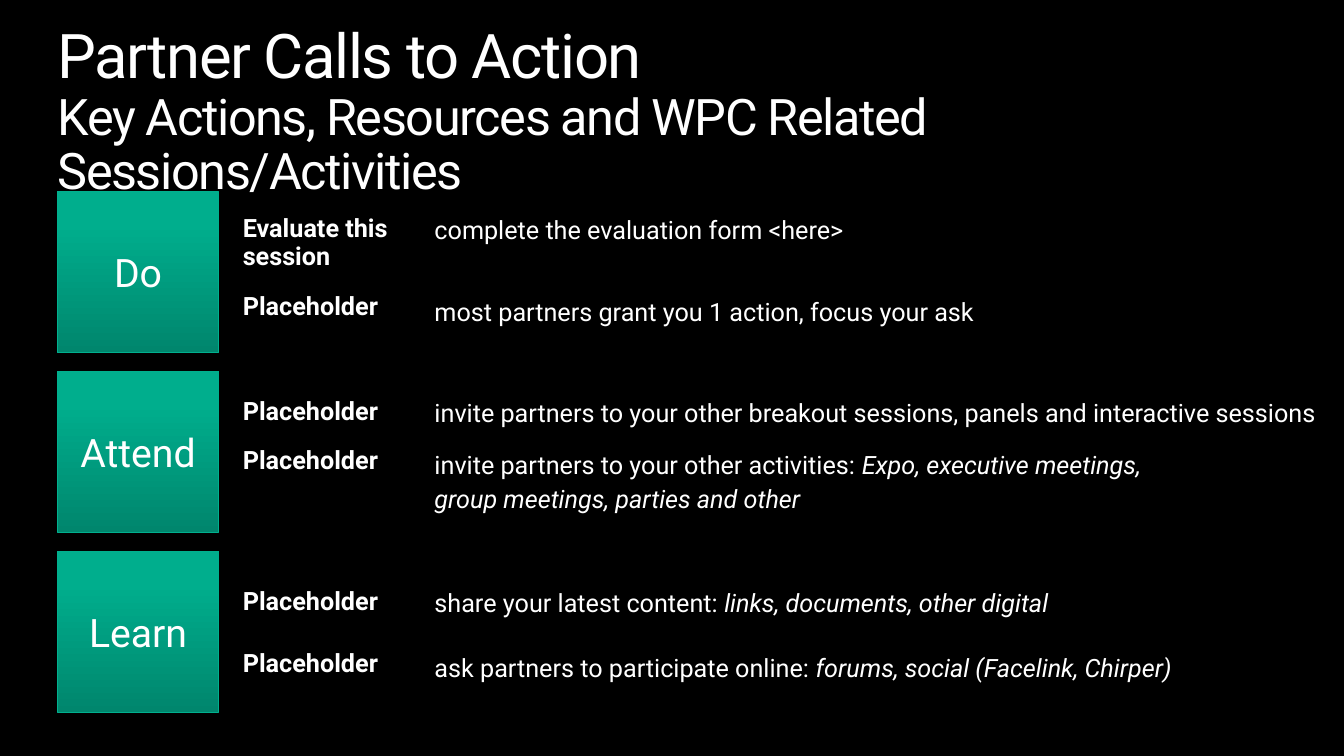
from copy import deepcopy
from dataclasses import dataclass

from lxml import etree
from pptx import Presentation
from pptx.dml.color import RGBColor
from pptx.enum.shapes import MSO_SHAPE
from pptx.enum.text import MSO_ANCHOR, MSO_AUTO_SIZE, PP_ALIGN
from pptx.oxml.ns import qn
from pptx.util import Cm, Pt

RECTANGLE = MSO_SHAPE.RECTANGLE
MIDDLE = MSO_ANCHOR.MIDDLE
GROW = MSO_AUTO_SIZE.SHAPE_TO_FIT_TEXT
CENTER = PP_ALIGN.CENTER


@dataclass(frozen=True)
class Theme:
    font: str = "Roboto"
    black: RGBColor = RGBColor(0, 0, 0)
    white: RGBColor = RGBColor(255, 255, 255)
    edge: RGBColor = RGBColor(0x00, 0xB0, 0x8E)
    gradient: tuple = ((0, "00866D"), (0.8, "00AE8D"), (1, "00AF8E"))
    title: Pt = Pt(44)
    subtitle: Pt = Pt(36)
    category: Pt = Pt(28)
    body: Pt = Pt(18)


theme = Theme()


def add_run(paragraph, text, size, bold=None, italic=None):
    run = paragraph.add_run()
    run.text = text
    run.font.name = theme.font
    run.font.size = size
    run.font.color.rgb = theme.white
    run.font.bold = bold
    run.font.italic = italic
    return run


def add_text_box(left, top, width, height):
    frame = slide.shapes.add_textbox(Cm(left), Cm(top), Cm(width), Cm(height)).text_frame
    frame.word_wrap = True
    frame.auto_size = GROW
    frame.margin_left = frame.margin_right = frame.margin_top = frame.margin_bottom = 0
    return frame.paragraphs[0]


SLIDE_WIDTH = 33.87
MARGIN = 1.45
ROW_PITCH = 4.53

prs = Presentation()
prs.slide_width = Cm(SLIDE_WIDTH)
prs.slide_height = Cm(19.05)
slide = prs.slides.add_slide(prs.slide_layouts[6])
slide.background.fill.solid()
slide.background.fill.fore_color.rgb = theme.black

heading = add_text_box(MARGIN, 0.64, 30.96, 3.07)
heading.line_spacing = 0.9
title = add_run(heading, "Partner Calls to Action", theme.title)
heading.add_line_break()
subtitle = add_run(
    heading, "Key Actions, Resources and WPC Related Sessions/Activities", theme.subtitle
)
for heading_run in (title, subtitle):
    heading_run.font._element.set("spc", "-100")

categories = ("Do", "Attend", "Learn")

for index in range(len(categories)):
    band = slide.shapes.add_shape(
        RECTANGLE, 0, Cm(4.96 + index * ROW_PITCH), Cm(SLIDE_WIDTH), Cm(3.81)
    )
    band.shadow.inherit = False
    band.line.fill.background()
    band.fill.solid()
    band.fill.fore_color.rgb = theme.black
    band_color = band._element.spPr.find(".//" + qn("a:srgbClr"))
    etree.SubElement(band_color, qn("a:alpha"), val="55000")

for index, category in enumerate(categories):
    tile = slide.shapes.add_shape(
        RECTANGLE, Cm(MARGIN), Cm(4.83 + index * ROW_PITCH), Cm(4.06), Cm(4.06)
    )
    tile.shadow.inherit = False
    tile.line.color.rgb = theme.edge
    tile.line.width = Pt(0.75)
    tile.fill.gradient()
    tile.fill.gradient_angle = 90
    stop_list = tile._element.spPr.find(".//" + qn("a:gsLst"))
    stop_list.append(deepcopy(stop_list[-1]))
    for stop, (position, color) in zip(tile.fill.gradient_stops, theme.gradient):
        stop.position = position
        stop.color.rgb = RGBColor.from_string(color)
    caption = tile.text_frame
    caption.margin_left = caption.margin_right = caption.margin_top = caption.margin_bottom = 0
    caption.vertical_anchor = MIDDLE
    caption.paragraphs[0].alignment = CENTER
    add_run(caption.paragraphs[0], category, theme.category)

NARROW, WIDE = 21.44, 22.91
actions = (
    (5.41, NARROW, None, ("Evaluate this ", "session"),
     "complete the evaluation form <here>", ()),
    (7.37, NARROW, Pt(24), ("Placeholder",),
     "most partners grant you 1 action, focus your ask", ()),
    (10.01, WIDE, None, ("Placeholder",),
     "invite partners to your other breakout sessions, panels and interactive sessions", ()),
    (11.25, NARROW, Pt(24), ("Placeholder",),
     "invite partners to your other activities: ",
     ("Expo, executive meetings, ", "group meetings, parties and other")),
    (14.81, WIDE, None, ("Placeholder",),
     "share your latest content: ", ("links, documents, other digital",)),
    (16.36, NARROW, Pt(24), ("Placeholder",),
     "ask partners to participate online: ", ("forums, social (Facelink, Chirper)",)),
)

for top, width, spacing, label_lines, lead, example_lines in actions:
    detail = add_text_box(10.95, top, width, 0.76 + 0.85 * (len(example_lines) > 1))
    if spacing:
        detail.line_spacing = spacing
        detail.space_after = Pt(6)
    add_run(detail, lead, theme.body)
    for number, line in enumerate(example_lines):
        if number:
            detail.add_line_break()
        add_run(detail, line, theme.body, italic=True)

    label = add_text_box(6.12, top, 4.39, 0.71 * len(label_lines))
    label.line_spacing = Pt(20)
    label.space_after = Pt(6)
    for number, line in enumerate(label_lines):
        if number:
            label.add_line_break()
        add_run(label, line, theme.body, bold=True)

prs.save("out.pptx")
